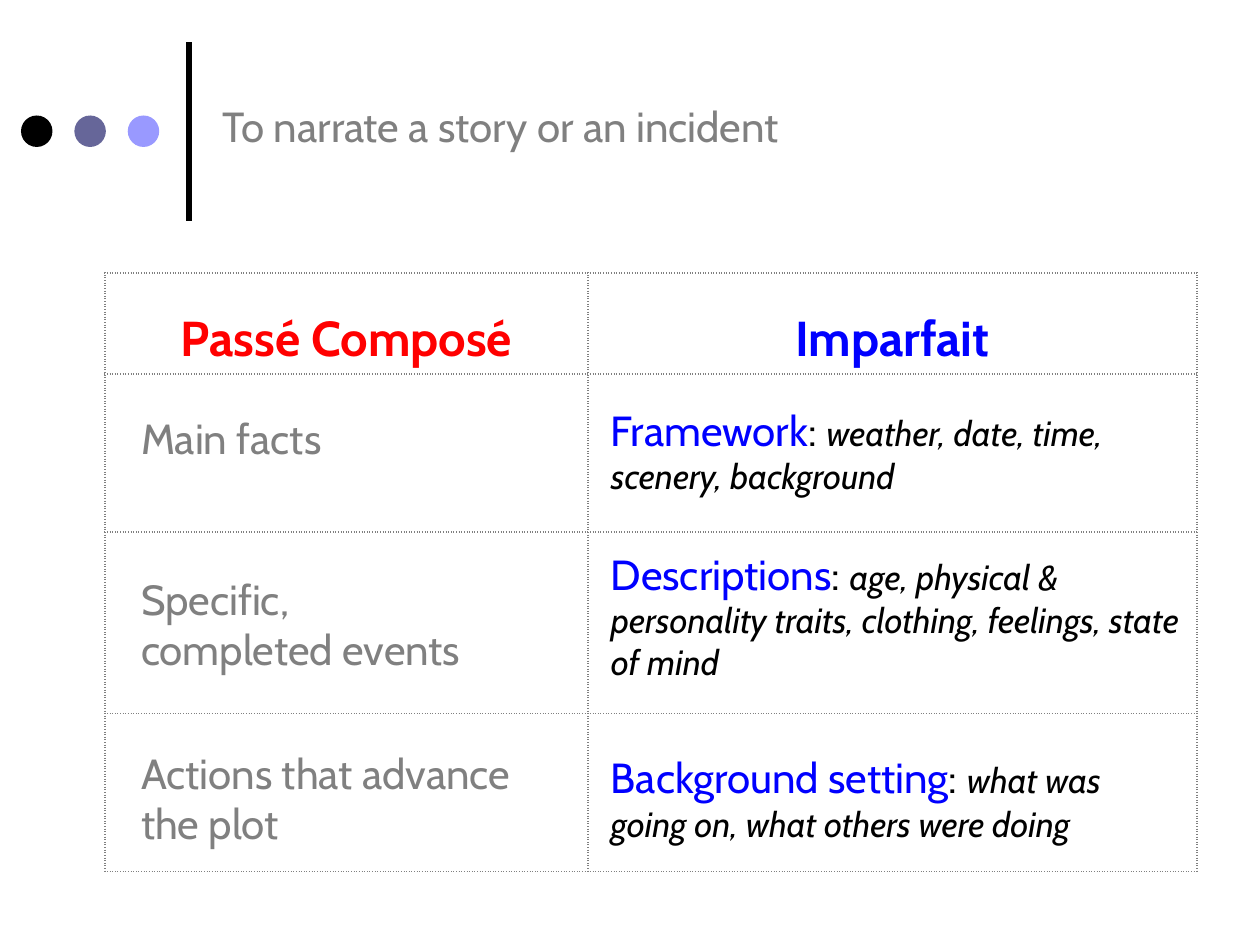
from lxml import etree
from pptx import Presentation
from pptx.dml.color import RGBColor
from pptx.enum import shapes, text
from pptx.oxml import ns
from pptx.util import Pt

COLORS = {
    "black": "000000", "slate": "666699", "lavender": "9999FF",
    "gray": "808080", "red": "FF0000", "blue": "0000FF",
}


def add_run(paragraph, words, size, color, bold=False, italic=False):
    run = paragraph.add_run()
    run.text = words
    run.font.name = "Cabin"
    run.font.size = Pt(size)
    run.font.bold = bold
    run.font.italic = italic
    run.font.color.rgb = RGBColor.from_string(COLORS[color])


def add_text(left, top, width, height, paragraphs):
    """Add a text box; each paragraph is a list of add_run arguments."""
    box = slide.shapes.add_textbox(Pt(left), Pt(top), Pt(width), Pt(height))
    frame = box.text_frame
    frame.word_wrap = True
    for index, runs in enumerate(paragraphs):
        paragraph = frame.add_paragraph() if index else frame.paragraphs[0]
        for run in runs:
            add_run(paragraph, *run)


presentation = Presentation()
presentation.slide_width, presentation.slide_height = Pt(720), Pt(540)
slide = presentation.slides.add_slide(presentation.slide_layouts[6])

# Title with its bar and dots
bar = slide.shapes.add_connector(
    shapes.MSO_CONNECTOR.STRAIGHT, Pt(108), Pt(126), Pt(108), Pt(24))
bar.line.width = Pt(3)
bar.line.color.rgb = RGBColor.from_string(COLORS["black"])
etree.SubElement(bar._element.spPr, ns.qn("a:effectLst"))

for index, color in enumerate(["black", "slate", "lavender"]):
    dot = slide.shapes.add_shape(
        shapes.MSO_SHAPE.OVAL, Pt(12 + 30.5 * index), Pt(66), Pt(18), Pt(18))
    dot.shadow.inherit = False
    dot.fill.solid()
    dot.fill.fore_color.rgb = RGBColor.from_string(COLORS[color])
    dot.line.fill.background()

add_text(120, 54, 576, 36, [[("To narrate a story or an incident", 24, "gray")]])

# Table grid with headings
column_widths = [276, 348]
row_heights = [57.6, 90.5, 103.5, 90.5]
table = slide.shapes.add_table(
    len(row_heights), len(column_widths), Pt(60), Pt(156),
    Pt(sum(column_widths)), Pt(sum(row_heights))).table
table.first_row = table.horz_banding = False
for column, width in zip(table.columns, column_widths):
    column.width = Pt(width)
for row, height in zip(table.rows, row_heights):
    row.height = Pt(height)

for cell in table.iter_cells():
    cell.fill.background()
    properties = cell._tc.get_or_add_tcPr()
    for position, side in enumerate(["lnL", "lnR", "lnT", "lnB"]):
        border = etree.Element(ns.qn(f"a:{side}"), w=str(Pt(1)))
        fill = etree.SubElement(border, ns.qn("a:solidFill"))
        etree.SubElement(fill, ns.qn("a:srgbClr"), val=COLORS["gray"])
        etree.SubElement(border, ns.qn("a:prstDash"), val="sysDot")
        properties.insert(position, border)

headings = [("Passé Composé", "red"), ("Imparfait", "blue")]
for column, (heading, color) in enumerate(headings):
    paragraph = table.cell(0, column).text_frame.paragraphs[0]
    paragraph.alignment = text.PP_ALIGN.CENTER
    paragraph.line_spacing = 1.5
    paragraph.space_before = Pt(6)
    add_run(paragraph, heading, 28, color, bold=True)

# Uses of the passé composé: top, height, lines
past_uses = [
    (232, 36, ["Main facts"]),
    (324, 65.5, ["Specific,", "completed events"]),
    (423.5, 65.5, ["Actions that advance", "the plot"]),
]
for top, height, lines in past_uses:
    add_text(73.5, top, 256, height, [[(line, 24, "gray")] for line in lines])

# Uses of the imparfait: top, width, height, term, details
imperfect_uses = [
    (227.5, 336, 60.5, "Framework", "weather, date, time, scenery, background"),
    (309.6, 340.5, 85, "Descriptions",
     "age, physical & personality traits, clothing, feelings, state of mind"),
    (426, 340.5, 60.5, "Background setting",
     "what was going on, what others were doing"),
]
for top, width, height, term, details in imperfect_uses:
    add_text(342, top, width, height, [[
        (term, 24, "blue"), (": ", 24, "black"),
        (details, 20, "black", False, True)]])

presentation.save("out.pptx")
